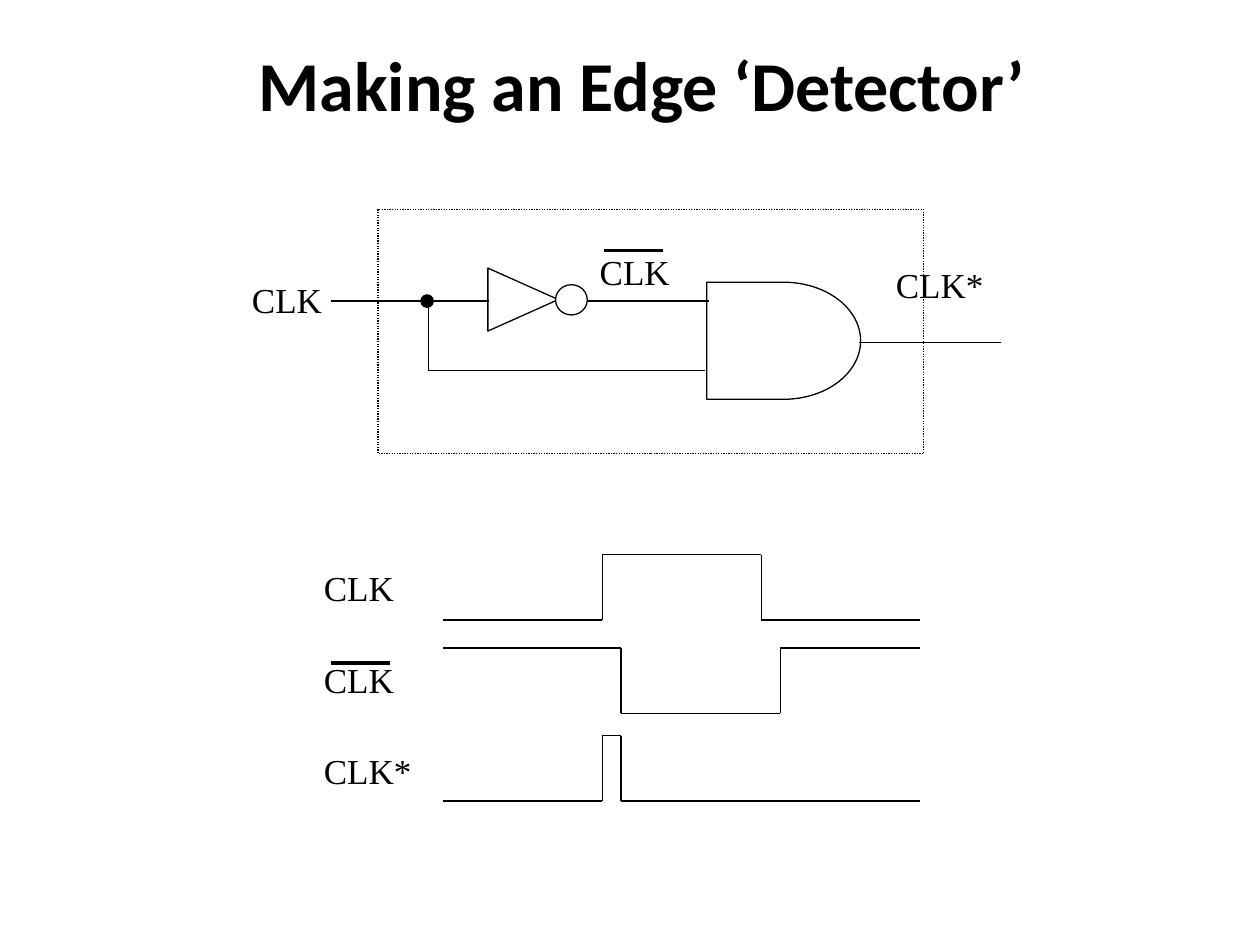
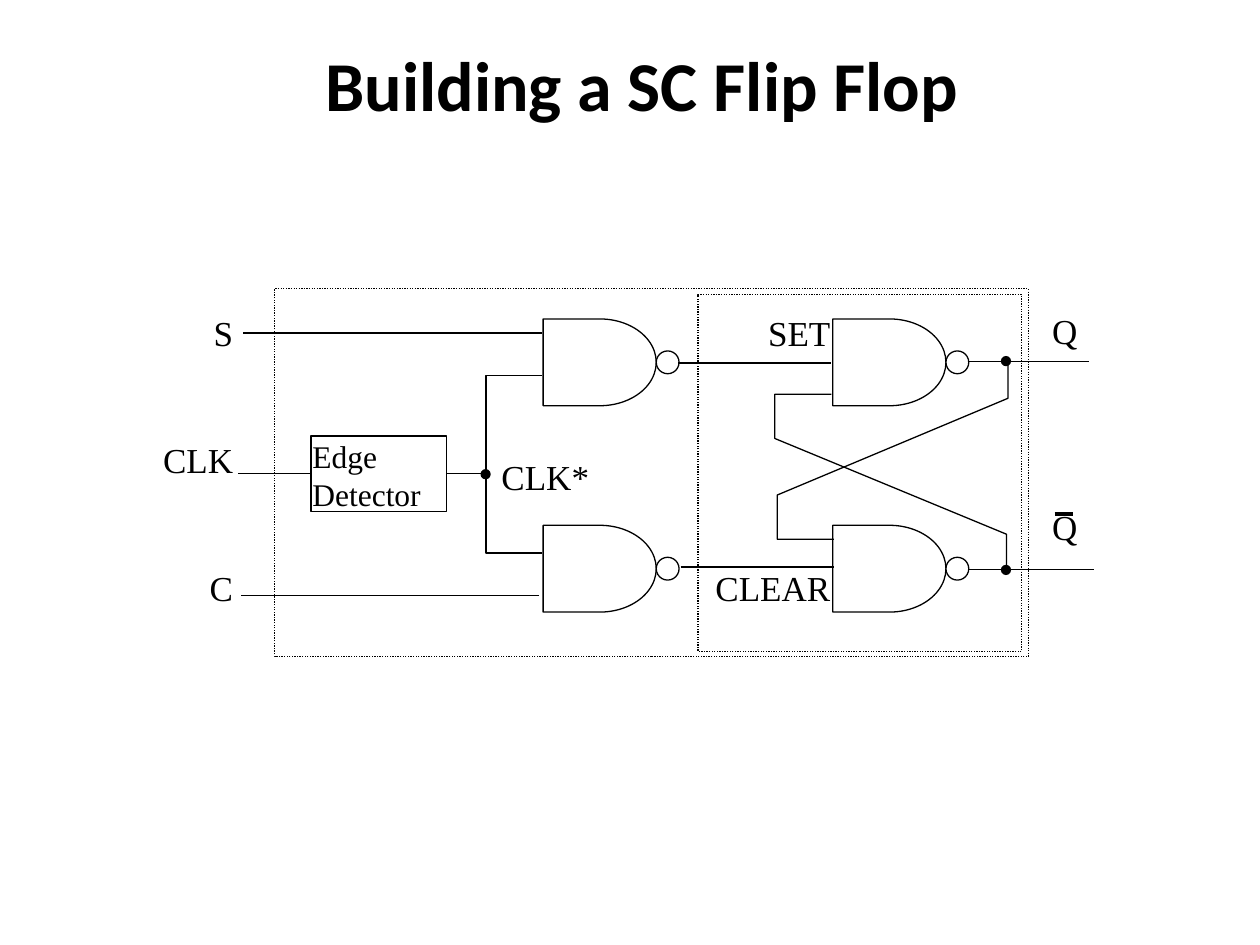
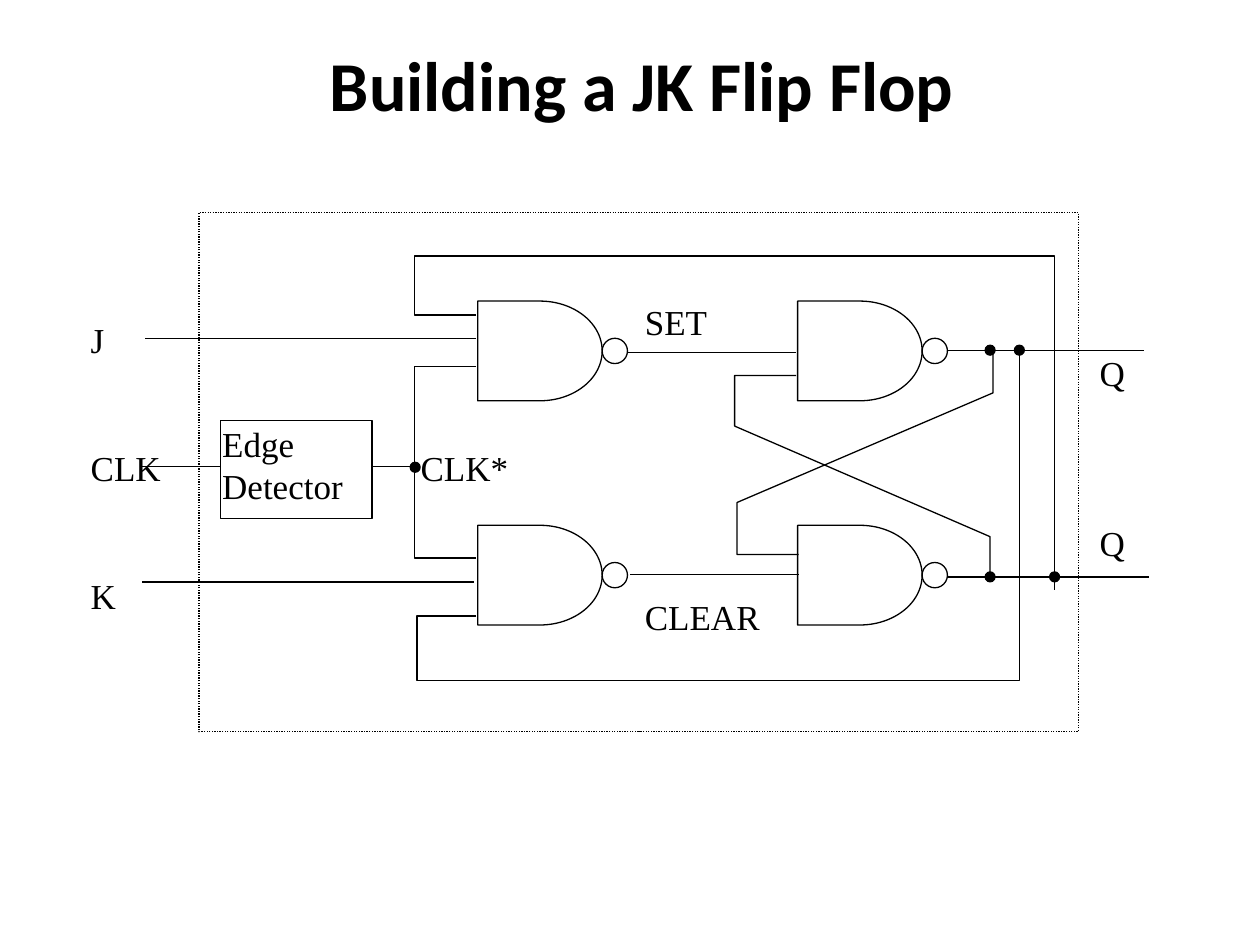
from itertools import pairwise

from lxml.etree import SubElement
from pptx import Presentation
from pptx.dml.color import RGBColor
from pptx.enum.dml import MSO_LINE
from pptx.enum.shapes import MSO_CONNECTOR, MSO_SHAPE
from pptx.enum.text import MSO_ANCHOR, PP_ALIGN
from pptx.oxml.ns import qn
from pptx.util import Cm, Pt

COLORS = {"ink": "000000", "paper": "FFFFFF"}
TITLE_FONT = {"name": "Calibri", "size": Pt(40), "bold": True}
LABEL_FONT = {"name": "Times New Roman", "size": Pt(20)}
WIRE_WIDTH = 0.75
BAR_WIDTH = 2


def color(name):
    return RGBColor.from_string(COLORS[name])


def apply_format(target, formats):
    for attribute, value in formats.items():
        setattr(target, attribute, value)


def set_margins(frame, margin):
    sides = ("left", "top", "right", "bottom")
    apply_format(frame, {f"margin_{side}": Cm(margin) for side in sides})


def write(paragraph, text, font):
    run = paragraph.add_run()
    run.text = text
    apply_format(run.font, font)
    run.font.color.rgb = color("ink")


def add_title(slide, text):
    frame = slide.shapes.add_textbox(Cm(3.53), Cm(0.71), Cm(18.82), Cm(1.96)).text_frame
    frame.word_wrap = True
    frame.paragraphs[0].alignment = PP_ALIGN.CENTER
    write(frame.paragraphs[0], text, TITLE_FONT)


def add_labels(slide, box, lines, gap=0, tab=None, **paragraph_format):
    """Write lines in one box, gap points apart; tab is a stop in cm."""
    frame = slide.shapes.add_textbox(*map(Cm, box)).text_frame
    frame.word_wrap = True
    set_margins(frame, 0)
    for index, line in enumerate(lines):
        paragraph = frame.add_paragraph() if index else frame.paragraphs[0]
        apply_format(paragraph, paragraph_format)
        if index and gap:
            paragraph.space_before = Pt(gap)
        if tab and "\t" in line:
            stops = SubElement(paragraph._p.get_or_add_pPr(), qn("a:tabLst"))
            SubElement(stops, qn("a:tab"), pos=str(Cm(tab)), algn="l")
        write(paragraph, line, LABEL_FONT)


def add_part(slide, preset, box, fill="paper"):
    part = slide.shapes.add_shape(preset, *map(Cm, box))
    part.shadow.inherit = False
    if fill:
        part.fill.solid()
        part.fill.fore_color.rgb = color(fill)
    else:
        part.fill.background()
    part.line.color.rgb = color("ink")
    part.line.width = Pt(WIRE_WIDTH)
    return part


def add_boundary(slide, *box):
    boundary = add_part(slide, MSO_SHAPE.RECTANGLE, box, fill=None)
    boundary.line.dash_style = MSO_LINE.ROUND_DOT


def add_node(slide, x, y, diameter):
    """Mark a wire junction centred on x, y."""
    radius = diameter / 2
    add_part(slide, MSO_SHAPE.OVAL, (x - radius, y - radius, diameter, diameter), "ink")


def add_line(slide, start, end, width=WIRE_WIDTH):
    line = slide.shapes.add_connector(MSO_CONNECTOR.STRAIGHT, *map(Cm, (*start, *end)))
    line.line.color.rgb = color("ink")
    line.line.width = Pt(width)
    SubElement(line._element.spPr, qn("a:effectLst"))


def add_bent_wire(slide, *points):
    start, *rest = [tuple(map(Cm, point)) for point in points]
    builder = slide.shapes.build_freeform(*start)
    builder.add_line_segments(rest, close=False)
    wire = builder.convert_to_shape()
    wire.shadow.inherit = False
    wire.fill.background()
    wire.line.color.rgb = color("ink")
    wire.line.width = Pt(WIRE_WIDTH)


def add_waveform(slide, low, edges, levels):
    """Draw a signal that takes each 0/1 level between successive edges."""
    swing = 1.32
    points = [(x, low - swing * level)
              for (left, right), level in zip(pairwise(edges), levels)
              for x in (left, right)]
    for start, end in pairwise(points):
        add_line(slide, start, end)


def add_nand(slide, x, y, width, height, bubble):
    add_part(slide, MSO_SHAPE.FLOWCHART_DELAY, (x, y, width, height))
    add_part(slide, MSO_SHAPE.OVAL,
             (x + width, y + (height - bubble) / 2, bubble, bubble))


def add_nand_grid(slide, columns, rows, size):
    for x in columns:
        for y in rows:
            add_nand(slide, x, y, *size)


def add_edge_detector(slide, box, size):
    detector = add_part(slide, MSO_SHAPE.RECTANGLE, box)
    frame = detector.text_frame
    apply_format(frame, {"word_wrap": True, "vertical_anchor": MSO_ANCHOR.TOP})
    set_margins(frame, 0.03)
    frame.paragraphs[0].alignment = PP_ALIGN.LEFT
    write(frame.paragraphs[0], "Edge Detector", LABEL_FONT | {"size": Pt(size)})


def add_wiring(slide, straight, bent):
    for start, end in straight:
        add_line(slide, start, end)
    for points in bent:
        add_bent_wire(slide, *points)


def build_edge_detector(slide):
    add_title(slide, "Making an Edge ‘Detector’")

    add_part(slide, MSO_SHAPE.FLOWCHART_DELAY, (14.25, 5.69, 3.1, 2.36))
    inverter = add_part(slide, MSO_SHAPE.FLOWCHART_EXTRACT, (9.91, 5.33, 1.27, 1.42))
    inverter.rotation = 90
    add_part(slide, MSO_SHAPE.OVAL, (11.2, 5.74, 0.64, 0.61))
    add_wiring(
        slide,
        straight=[((11.86, 6.07), (14.3, 6.07)),
                  ((9.86, 6.07), (6.68, 6.07)),
                  ((17.32, 6.91), (20.17, 6.91))],
        bent=[[(14.22, 7.47), (8.64, 7.47), (8.64, 6.07)]])
    add_boundary(slide, 7.62, 4.22, 11, 4.93)
    add_node(slide, 8.61, 6.07, 0.25)
    add_labels(slide, (5.08, 5.61, 1.93, 0.89), ["CLK"])
    add_labels(slide, (18.06, 5.31, 2.72, 1.32), ["CLK*"])
    add_labels(slide, (12.09, 5.05, 1.93, 0.89), ["CLK"])
    add_line(slide, (12.17, 5.05), (13.36, 5.05), BAR_WIDTH)

    for row, signal in enumerate(["CLK", "CLK", "CLK*"]):
        add_labels(slide, (6.53, 11.43 + 1.84 * row, 1.96, 0.94), [signal])
    add_line(slide, (6.68, 13.36), (7.87, 13.36), BAR_WIDTH)

    start, rise, fall, end = 8.94, 12.14, 15.35, 18.54
    delay = 0.38
    add_waveform(slide, 12.5, [start, rise, fall, end], [0, 1, 0])
    add_waveform(slide, 14.38, [start, rise + delay, fall + delay, end], [1, 0, 1])
    add_waveform(slide, 16.15, [start, rise, rise + delay, end], [0, 1, 0])


def build_sc_flip_flop(slide):
    add_title(slide, "Building a SC Flip Flop")

    add_nand_grid(slide, (10.95, 16.79), (6.43, 10.59), (2.28, 1.75, 0.46))
    add_wiring(
        slide,
        straight=[((10.92, 6.71), (4.9, 6.71)),
                  ((10.87, 12.01), (4.85, 12.01)),
                  ((13.67, 7.32), (16.76, 7.32)),
                  ((13.72, 11.43), (16.81, 11.43)),
                  ((9.8, 9.55), (4.8, 9.55)),
                  ((19.51, 11.48), (22.05, 11.48)),
                  ((19.51, 7.29), (21.95, 7.29))],
        bent=[[(10.92, 11.15), (9.8, 11.15), (9.8, 9.22)],
              [(10.92, 7.57), (9.8, 7.57), (9.8, 9.5)],
              [(20.29, 11.48), (20.29, 10.77), (15.62, 8.84),
               (15.62, 7.95), (16.76, 7.95)],
              [(20.32, 7.32), (20.32, 8.03), (15.67, 9.98),
               (15.67, 10.87), (16.81, 10.87)]])
    add_edge_detector(slide, (6.27, 8.79, 2.74, 1.52), 18)
    for x, y in [(9.79, 9.56), (20.28, 11.49), (20.28, 7.28)]:
        add_node(slide, x, y, 0.18)
    add_boundary(slide, 5.54, 5.82, 15.19, 7.42)
    add_boundary(slide, 14.07, 5.94, 6.53, 7.19)

    add_labels(slide, (3.1, 6.27, 1.6, 6.58), ["S", "CLK", "C"], gap=49,
               alignment=PP_ALIGN.RIGHT)
    add_labels(slide, (14, 6.27, 2.74, 6.63), ["SET", "CLEAR"], gap=122,
               alignment=PP_ALIGN.RIGHT)
    add_labels(slide, (21.21, 6.53, 1.09, 5.31), ["Q", "Q"], gap=96,
               line_spacing=Pt(16))
    add_labels(slide, (10.11, 9.19, 2.36, 1.12), ["CLK*"])
    add_line(slide, (21.26, 10.36), (21.64, 10.36), BAR_WIDTH)


def build_jk_flip_flop(slide):
    add_title(slide, "Building a JK Flip Flop")

    add_boundary(slide, 4.01, 4.29, 17.73, 10.46)
    add_nand_grid(slide, (9.63, 16.08), (6.07, 10.59), (2.51, 2.01, 0.51))
    add_wiring(
        slide,
        straight=[((9.6, 6.83), (2.92, 6.83)),
                  ((9.55, 11.73), (2.87, 11.73)),
                  ((12.65, 7.11), (16.05, 7.11)),
                  ((12.7, 11.58), (16.1, 11.58)),
                  ((8.36, 9.4), (2.82, 9.4)),
                  ((19.1, 11.63), (23.16, 11.63)),
                  ((19.1, 7.06), (23.06, 7.06))],
        bent=[[(9.6, 11.25), (8.36, 11.25), (8.36, 9.02)],
              [(9.6, 7.39), (8.36, 7.39), (8.36, 9.6)],
              [(19.96, 11.63), (19.96, 10.82), (14.81, 8.59),
               (14.81, 7.57), (16.05, 7.57)],
              [(20.02, 7.11), (20.02, 7.92), (14.86, 10.13),
               (14.86, 11.18), (16.1, 11.18)],
              [(9.6, 12.42), (8.41, 12.42), (8.41, 13.72),
               (20.55, 13.72), (20.55, 7.06)],
              [(9.6, 6.35), (8.36, 6.35), (8.36, 5.16),
               (21.26, 5.16), (21.26, 11.89)]])
    add_edge_detector(slide, (4.45, 8.48, 3.05, 1.98), 20)
    for x, y in [(8.37, 9.42), (19.96, 11.63), (19.96, 7.06),
                 (20.55, 7.06), (21.26, 11.63)]:
        add_node(slide, x, y, 0.2)

    add_labels(slide, (1.83, 6.43, 8.97, 6.38), ["J", "CLK\tCLK*", "K"], gap=49, tab=6.65)
    add_labels(slide, (13, 6.05, 3.12, 7.04), ["SET", "CLEAR"], gap=145)
    add_labels(slide, (22.17, 7.09, 0.99, 4.65), ["Q", "Q"], gap=73)


def main():
    deck = Presentation()
    apply_format(deck, {"slide_width": Cm(25.4), "slide_height": Cm(19.05)})
    for build in (build_edge_detector, build_sc_flip_flop, build_jk_flip_flop):
        build(deck.slides.add_slide(deck.slide_layouts[6]))
    deck.save("out.pptx")


if __name__ == "__main__":
    main()
